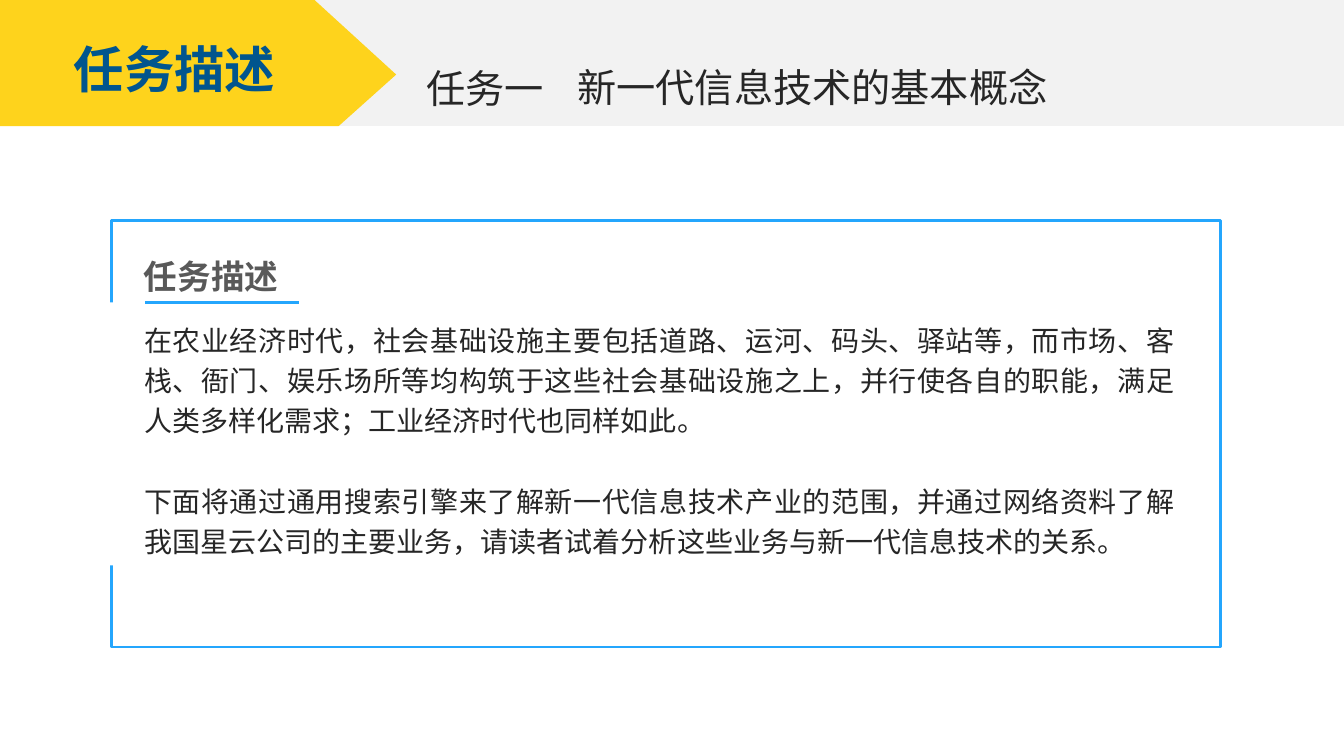
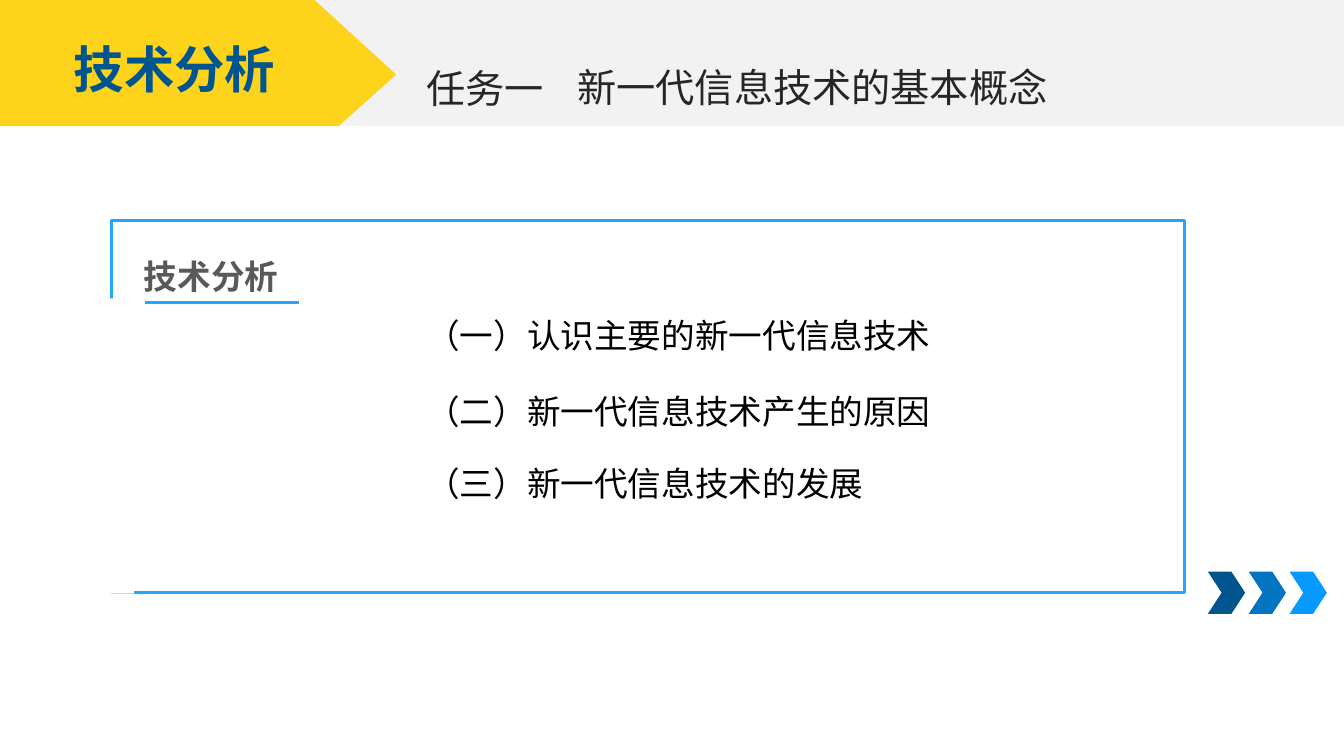
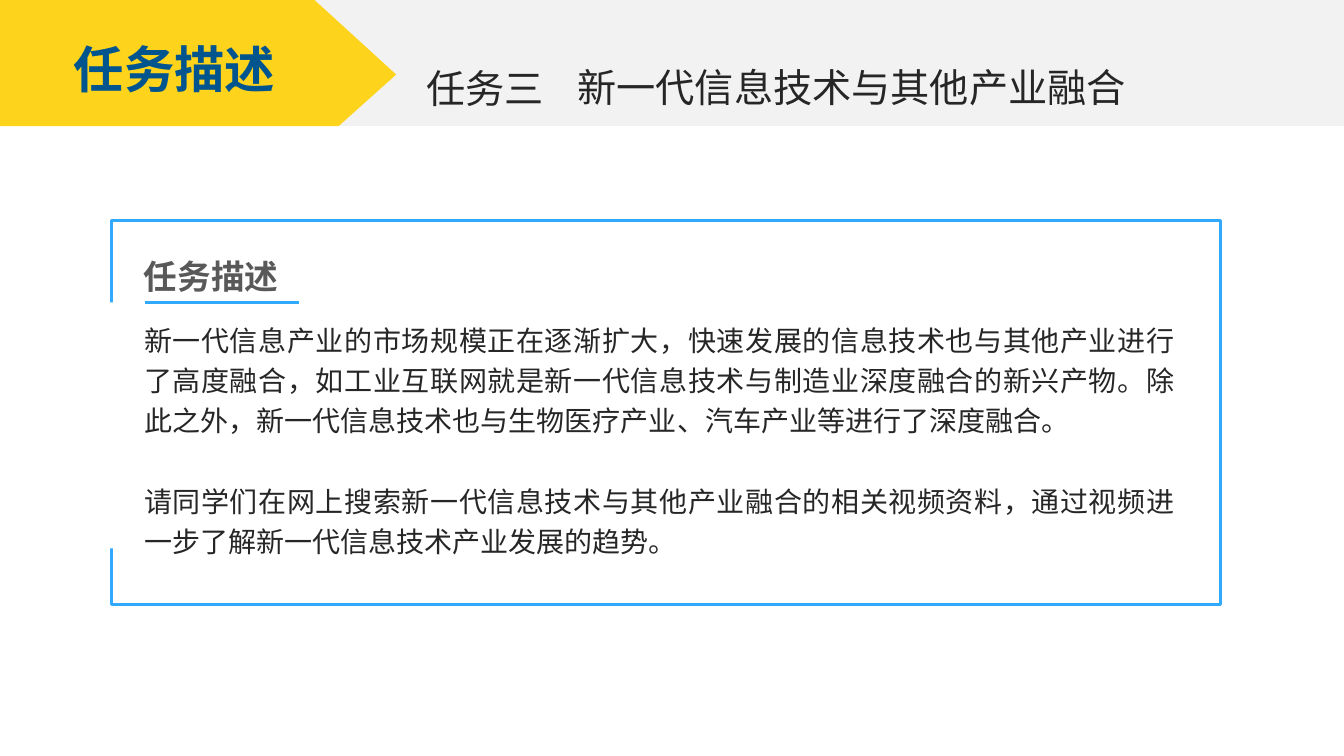
"""Build three task slides with a shared banner and framed content."""
import dataclasses

import lxml.etree
import pptx
import pptx.dml.color
import pptx.enum.shapes
import pptx.enum.text
import pptx.oxml.ns
import pptx.util

Inches = pptx.util.Inches
Pt = pptx.util.Pt
Kind = pptx.enum.shapes.MSO_SHAPE
Align = pptx.enum.text.PP_ALIGN
qn = pptx.oxml.ns.qn


@dataclasses.dataclass(frozen=True)
class Theme:
    latin: str = "Arial"
    asian: str = "Noto Sans CJK SC"
    white: str = "FFFFFF"
    black: str = "000000"
    ink: str = "262626"
    gray: str = "595959"
    pale: str = "F2F2F2"
    gold: str = "FED31C"
    navy: str = "01558E"
    blue: str = "0274C2"
    sky: str = "0799FD"
    edge: str = "24A6FD"
    light: str = "31AAFD"
    title: int = 36
    topic: int = 28
    head: int = 24
    body: int = 20
    rule: int = 2


theme = Theme()
rgb = pptx.dml.color.RGBColor.from_string


def paint(shape, fill, line=None):
    shape.shadow.inherit = False
    shape.fill.solid()
    shape.fill.fore_color.rgb = rgb(fill)
    if line:
        shape.line.color.rgb = rgb(line)
        shape.line.width = Pt(theme.rule)
    else:
        shape.line.fill.background()


def write(box, lines, size, color, bold=False, font=theme.latin,
          align=Align.LEFT, lead=1, gap=0, wrap=True):
    frame = box.text_frame
    frame.text = "\n".join(lines)
    frame.word_wrap = wrap
    frame.auto_size = pptx.enum.text.MSO_AUTO_SIZE.NONE
    frame.vertical_anchor = pptx.enum.text.MSO_ANCHOR.TOP
    for para in frame.paragraphs:
        para.alignment = align
        para.line_spacing = lead
        para.space_after = Pt(gap)
        para.font.size = Pt(size)
        para.font.bold = bold
        para.font.color.rgb = rgb(color)
        para.font.name = font
    for props in box.element.iter(qn("a:defRPr")):
        lxml.etree.SubElement(props, qn("a:ea"), typeface=theme.asian)


pages = [
    dict(title="任务描述", task="任务一", topic="新一代信息技术的基本概念",
         frame=(11, 4.23), mask=(0.95, 3, 0.38, 2.61), edge=theme.edge,
         body=["在农业经济时代，社会基础设施主要包括道路、运河、码头、驿站等，而市场、客栈、"
               "衙门、娱乐场所等均构筑于这些社会基础设施之上，并行使各自的职能，满足人类多样化"
               "需求；工业经济时代也同样如此。",
               "下面将通过通用搜索引擎来了解新一代信息技术产业的范围，并通过网络资料了解我国"
               "星云公司的主要业务，请读者试着分析这些业务与新一代信息技术的关系。"]),
    dict(title="技术分析", task="任务一", topic="新一代信息技术的基本概念",
         frame=(10.64, 3.69), mask=(0.97, 2.96, 0.36, 2.93), edge=theme.edge,
         steps=[(3.08, "（一）认识主要的新一代信息技术"),
                (3.83, "（二）新一代信息技术产生的原因"),
                (4.54, "（三）新一代信息技术的发展")]),
    dict(title="任务描述", task="任务三", topic="新一代信息技术与其他产业融合",
         frame=(11, 3.81), mask=(0.97, 3, 0.36, 2.44), edge=theme.light,
         body=["新一代信息产业的市场规模正在逐渐扩大，快速发展的信息技术也与其他产业进行了高度"
               "融合，如工业互联网就是新一代信息技术与制造业深度融合的新兴产物。除此之外，新一代"
               "信息技术也与生物医疗产业、汽车产业等进行了深度融合。",
               "请同学们在网上搜索新一代信息技术与其他产业融合的相关视频资料，通过视频进一步了解"
               "新一代信息技术产业发展的趋势。"]),
]

deck = pptx.Presentation()
deck.slide_width = Inches(13.33)
deck.slide_height = Inches(7.5)

for page in pages:
    slide = deck.slides.add_slide(deck.slide_layouts[5])
    shapes = slide.shapes

    wide, high = page["frame"]
    frame = shapes.add_shape(Kind.RECTANGLE, Inches(1.11), Inches(2.19),
                             Inches(wide), Inches(high))
    paint(frame, theme.white, page["edge"])
    mask = shapes.add_shape(Kind.RECTANGLE, *map(Inches, page["mask"]))
    paint(mask, theme.white)

    rule = shapes.add_connector(pptx.enum.shapes.MSO_CONNECTOR.STRAIGHT,
                                Inches(1.44), Inches(3), Inches(2.97), Inches(3))
    rule.line.color.rgb = rgb(page["edge"])
    rule.line.width = Pt(theme.rule)
    lxml.etree.SubElement(rule.element.spPr, qn("a:effectLst"))

    head = shapes.add_textbox(Inches(1.33), Inches(2.41), Inches(3.07), Inches(0.54))
    write(head, [page["title"]], theme.head, theme.gray, bold=True,
          align=Align.JUSTIFY, lead=1.2)

    if "body" in page:
        body = shapes.add_textbox(Inches(1.33), Inches(3.09), Inches(10.42), Inches(2.52))
        write(body, page["body"], theme.body, theme.ink,
              align=Align.JUSTIFY, lead=1.2, gap=28.8)

    band = shapes.add_shape(Kind.RECTANGLE, Inches(2.55), 0, Inches(10.78), Inches(1.25))
    paint(band, theme.pale)
    pen = shapes.build_freeform(0, 0)
    pen.add_line_segments([(Inches(x), Inches(y)) for x, y in
                           [(3.12, 0), (3.93, 0.74), (3.36, 1.25), (0, 1.25)]])
    paint(pen.convert_to_shape(), theme.gold)

    title = shapes.title
    title.left, title.top = Inches(0.62), Inches(0.33)
    title.width, title.height = Inches(2.22), Inches(0.71)
    write(title, [page["title"]], theme.title, theme.navy, bold=True,
          font=theme.asian, align=Align.CENTER, wrap=False)
    title.element.getparent().append(title.element)

    for key, left, top, width in [("topic", 5.63, 0.58, 7.04), ("task", 4.13, 0.59, 1.49)]:
        label = shapes.add_textbox(Inches(left), Inches(top), Inches(width), Inches(0.57))
        write(label, [page[key]], theme.topic, theme.ink)

    if "steps" in page:
        for top, text in page["steps"]:
            step = shapes.add_textbox(Inches(4.13), Inches(top), Inches(5.25), Inches(0.5))
            write(step, [text], theme.head, theme.black, wrap=False)
        for i, color in enumerate([theme.navy, theme.blue, theme.sky]):
            arrow = shapes.add_shape(Kind.CHEVRON, Inches(11.98 + 0.405 * i), Inches(5.67),
                                     Inches(0.37), Inches(0.42))
            arrow.adjustments[0] = 0.37
            paint(arrow, color)

deck.save("out.pptx")
